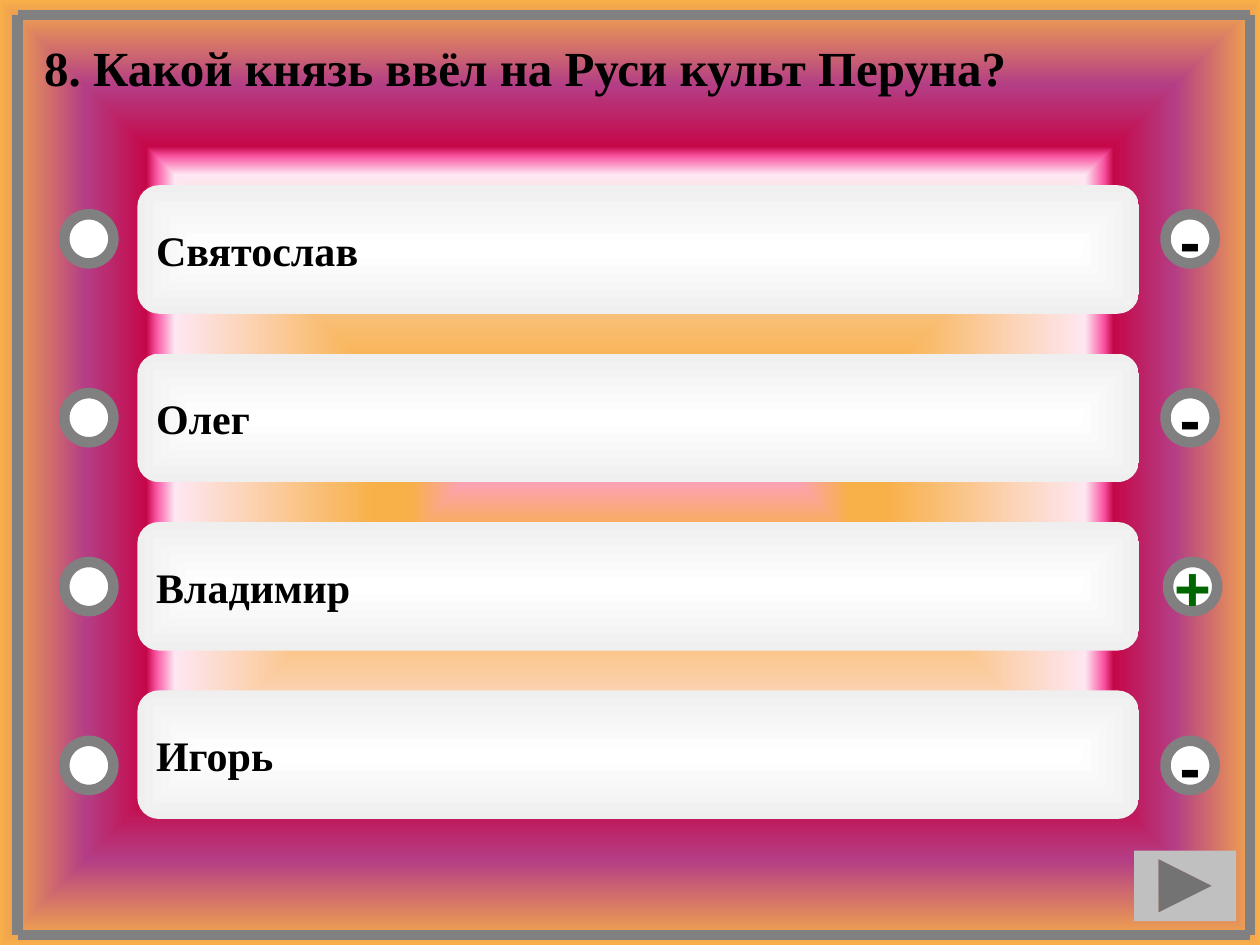
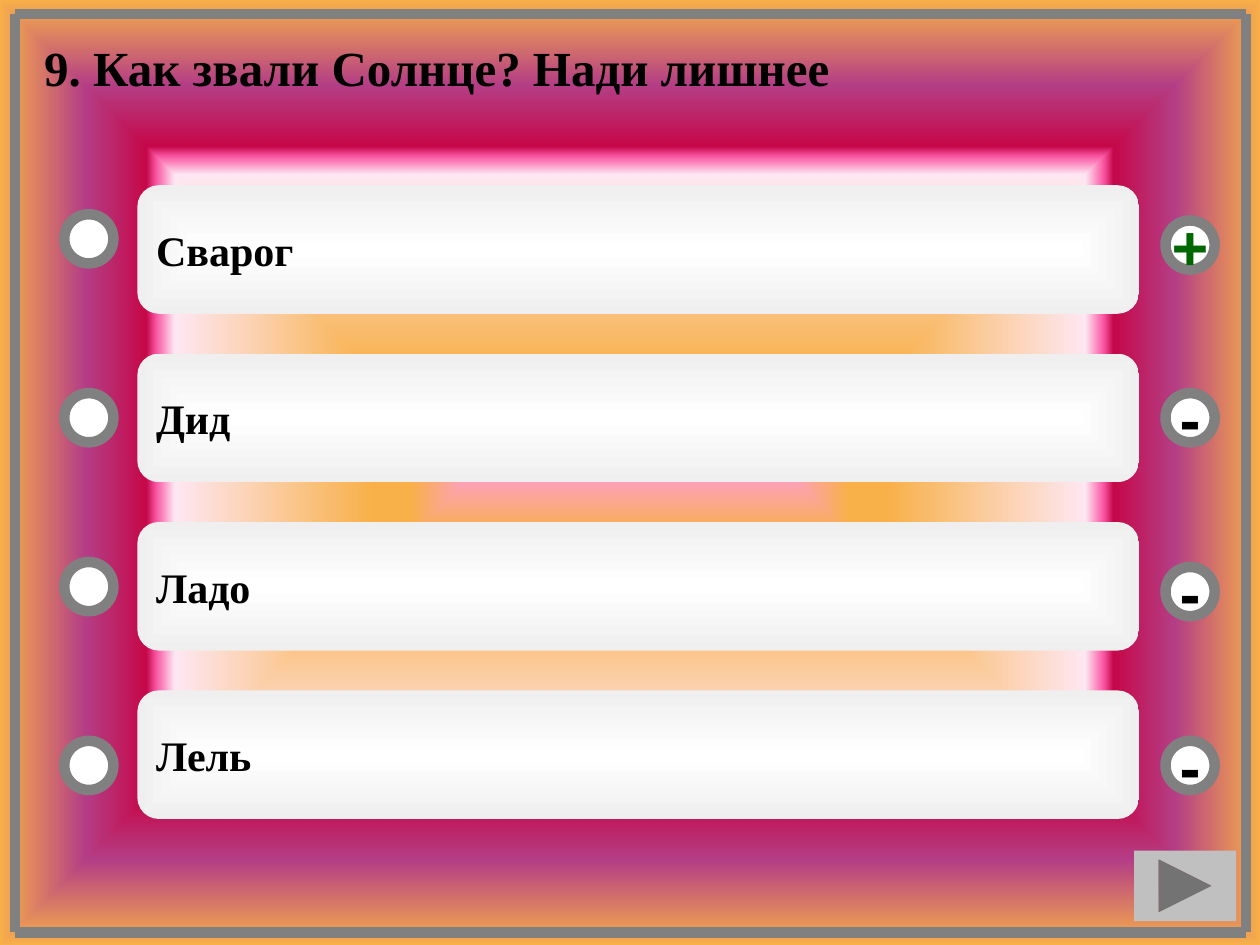
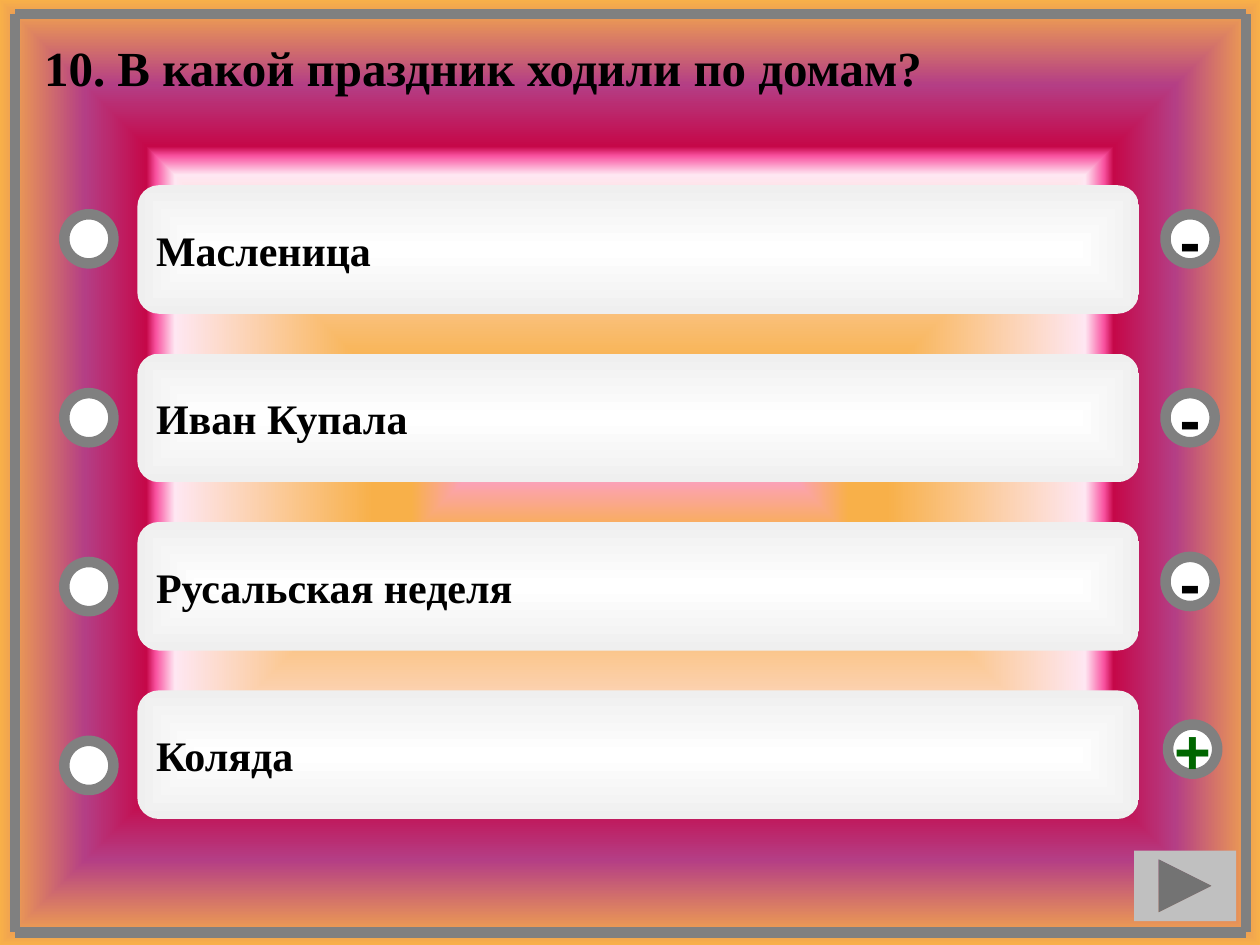
from dataclasses import dataclass
from lxml.etree import SubElement
from pptx import Presentation
from pptx.dml.color import RGBColor as Rgb
from pptx.enum.shapes import MSO_CONNECTOR as Link, MSO_SHAPE as Kind
from pptx.enum.text import MSO_ANCHOR as Anchor, MSO_AUTO_SIZE as Fit, PP_ALIGN as Align
from pptx.oxml.ns import qn
from pptx.util import Inches, Pt


@dataclass(frozen=True)
class Theme:
    """Colours, fonts and type sizes of the quiz."""
    ink: str = "000000"
    right: str = "006600"
    white: str = "FFFFFF"
    grey: str = "808080"
    key: str = "C0C0C0"
    serif: str = "Times New Roman"
    sans: str = "Arial"
    head: int = 28
    body: int = 24
    sign: int = 36
    rule: int = 6
    bar: tuple = ((0, "FFFFFF"), (100, "EFEFEF"))
    back: tuple = ((0, "FC9FCB"), (13, "F8B049"), (21, "F8B049"), (63, "FEE7F2"),
                   (67, "F952A0"), (69, "C50849"), (82, "B43E85"), (100, "F8B049"))


def blend(fill, props, stops):
    """Fill with a gradient that spreads from the centre to the edges."""
    fill.gradient()
    grad = props.find(qn("a:gradFill"))
    for part in list(grad):
        grad.remove(part)
    row = SubElement(grad, qn("a:gsLst"))
    for place, tone in stops:
        stop = SubElement(row, qn("a:gs"), pos=str(place * 1000))
        SubElement(stop, qn("a:srgbClr"), val=tone)
    route = SubElement(grad, qn("a:path"), path="shape")
    SubElement(route, qn("a:fillToRect"), {side: "50000" for side in "ltrb"})


class Quiz:
    """Draws quiz slides with lengths in percent of the slide's size."""

    def __init__(self, theme):
        """Start the deck and paint the shared background."""
        self.theme = theme
        self.deck = Presentation()
        self.deck.slide_width, self.deck.slide_height = Inches(10), Inches(7.5)
        master = self.deck.slide_master
        fill = master.background.fill
        blend(fill, master.element.find(".//" + qn("p:bgPr")), theme.back)

    def area(self, *shares):
        """Turn percent pairs of width and height into lengths."""
        sides = (self.deck.slide_width, self.deck.slide_height) * 2
        return [round(side * share / 100) for side, share in zip(sides, shares)]

    def label(self, shape, text, size, font, tone, align=Align.LEFT, anchor=Anchor.MIDDLE):
        """Set bold text in a shape."""
        frame = shape.text_frame
        frame.text = text
        frame.vertical_anchor = anchor
        para = frame.paragraphs[0]
        para.alignment = align
        face = para.runs[0].font
        face.size, face.name, face.bold = Pt(size), font, True
        face.color.rgb = Rgb.from_string(tone)

    def title(self, text):
        """Open a slide and place its question."""
        self.slide = self.deck.slides.add_slide(self.deck.slide_layouts[5])
        head = self.slide.shapes.title
        head.left, head.top, head.width, head.height = self.area(2.5, 3.33, 92.7, 7.6)
        self.label(head, text, self.theme.head, self.theme.serif, self.theme.ink,
                   anchor=Anchor.TOP)
        head.text_frame.word_wrap = True
        head.text_frame.auto_size = Fit.SHAPE_TO_FIT_TEXT

    def frame(self, left, top, right, low):
        """Draw four grouped lines around the slide."""
        group = self.slide.shapes.add_group_shape()
        for ends in ((left, top, right, top), (left, top, left, low),
                     (left, low, right, low), (right, top, right, low)):
            line = group.shapes.add_connector(Link.STRAIGHT, *self.area(*ends))
            self.edge(line)
            SubElement(line.element.spPr, qn("a:effectLst"))

    def edge(self, shape):
        """Give a shape the thick grey line."""
        shape.line.color.rgb = Rgb.from_string(self.theme.grey)
        shape.line.width = Pt(self.theme.rule)

    def shape(self, kind, *box, tone=None):
        """Add a plain shape without line or shadow."""
        shape = self.slide.shapes.add_shape(kind, *self.area(*box))
        shape.shadow.inherit = False
        shape.line.fill.background()
        if tone:
            shape.fill.solid()
            shape.fill.fore_color.rgb = Rgb.from_string(tone)
        return shape

    def bar(self, row, text):
        """Draw an answer bar."""
        bar = self.shape(Kind.ROUNDED_RECTANGLE, 10.9, 19.6 + 17.82 * row, 79.5, 13.6)
        blend(bar.fill, bar.element.spPr, self.theme.bar)
        self.label(bar, text, self.theme.body, self.theme.serif, self.theme.ink)

    def ring(self, left, top, sign=""):
        """Draw a ring, with a sign if there is one."""
        ring = self.shape(Kind.OVAL, left, top, 3.9, 5.2, tone=self.theme.white)
        self.edge(ring)
        if sign:
            tone = self.theme.right if sign == "+" else self.theme.ink
            self.label(ring, sign, self.theme.sign, self.theme.sans, tone, Align.CENTER)
            ring.text_frame.word_wrap = False

    def next(self):
        """Draw the forward button."""
        self.shape(Kind.ACTION_BUTTON_FORWARD_OR_NEXT, 90, 90, 8.1, 7.47,
                   tone=self.theme.key)


ROWS = (22.67, 41.6, 59.47, 78.4)
WIDE, TIGHT = (1.4, 1.6, 99.2, 98.93), (1.2, 1.47, 98.9, 98.67)
TASKS = (
    ("8. Какой князь ввёл на Руси культ Перуна?", WIDE,
     (("Святослав", "-", 92.5, ROWS[0]), ("Олег", "-", 92.5, ROWS[1]),
      ("Владимир", "+", 92.7, ROWS[2]), ("Игорь", "-", 92.5, ROWS[3]))),
    ("9. Как звали Солнце? Нади лишнее", TIGHT,
     (("Сварог", "+", 92.5, 23.33), ("Дид", "-", 92.5, ROWS[1]),
      ("Ладо", "-", 92.5, 60), ("Лель", "-", 92.5, ROWS[3]))),
    ("10. В какой праздник ходили по домам?", TIGHT,
     (("Масленица", "-", 92.5, ROWS[0]), ("Иван Купала", "-", 92.5, ROWS[1]),
      ("Русальская неделя", "-", 92.5, 58.93), ("Коляда", "+", 92.7, 76.67))),
)


def main():
    """Build the quiz and save it."""
    quiz = Quiz(Theme())
    for text, edges, answers in TASKS:
        quiz.title(text)
        quiz.frame(*edges)
        for row, (answer, sign, left, top) in enumerate(answers):
            quiz.bar(row, answer)
            quiz.ring(5.1, ROWS[row])
            quiz.ring(left, top, sign)
        quiz.next()
    quiz.deck.save("out.pptx")


if __name__ == "__main__":
    main()
